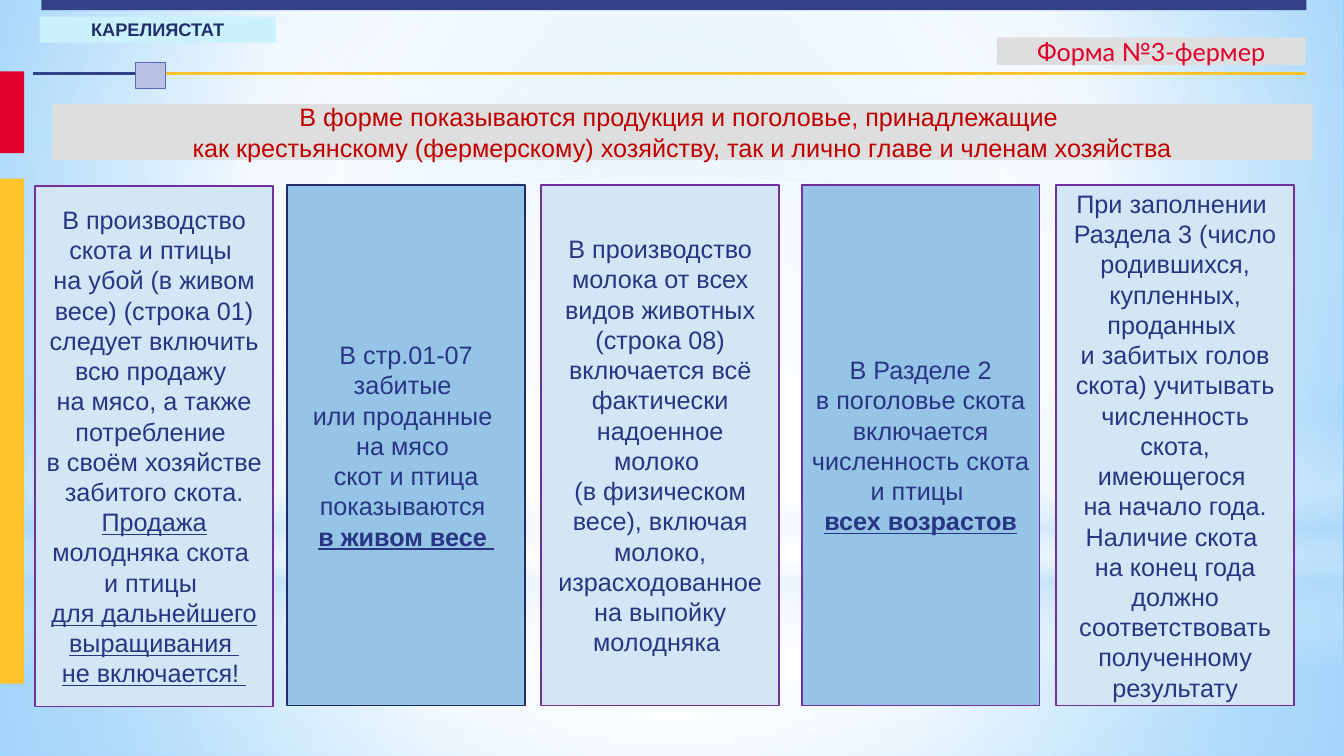
"""Builds the slide on filling in Form No. 3-farmer."""
import pptx
import pptx.dml.color
import pptx.enum.shapes
import pptx.enum.text
import pptx.oxml
import pptx.oxml.ns
import pptx.util

NAVY, GOLD, RED, GREY = "334286", "FFC32E", "E1002B", "DEDEDE"
INK, PURPLE, PALE, BLUE = "283583", "71309D", "D3E6F5", "95C4E7"
WHITE, HAZE = "FFFFFF", "B4DCFA"
CENTRE = (50, 50, 50, 50)
SHAPES = pptx.enum.shapes.MSO_SHAPE
ANCHORS = pptx.enum.text.MSO_ANCHOR
UNDERLINED = {"underline": True}
STRONG = {"underline": True, "bold": True}


def colour(value):
    return pptx.dml.color.RGBColor.from_string(value)


class SlideBuilder:
    def __init__(self, slide):
        self.slide = slide
        self.font = {"name": "Arial", "size": pptx.util.Pt(18)}

    def gradient(self, owner, stops, focus=None):
        owner.fill.gradient()
        element = self.slide.element if owner is self.slide.background else owner.element
        current = element.xpath(".//a:gradFill")[0]
        marks = "".join(
            f'<a:gs pos="{position * 1000}"><a:srgbClr val="{value}">'
            f'<a:alpha val="{opacity * 1000}"/></a:srgbClr></a:gs>'
            for position, value, opacity in stops
        )
        if focus:
            sides = " ".join(f'{side}="{part * 1000}"' for side, part in zip("ltrb", focus))
            direction = f'<a:path path="circle"><a:fillToRect {sides}/></a:path>'
        else:
            direction = '<a:lin ang="5400000" scaled="0"/>'
        namespace = pptx.oxml.ns.nsdecls("a")
        current.getparent().replace(current, pptx.oxml.parse_xml(
            f'<a:gradFill {namespace} rotWithShape="1"><a:gsLst>{marks}</a:gsLst>'
            f'{direction}</a:gradFill>'))

    def shape(self, box, fill=None, line=None, width=1.25, kind=SHAPES.RECTANGLE):
        shape = self.slide.shapes.add_shape(kind, *map(pptx.util.Pt, box))
        shape.shadow.inherit = False
        if fill:
            shape.fill.solid()
            shape.fill.fore_color.rgb = colour(fill)
        if line:
            shape.line.color.rgb = colour(line)
            shape.line.width = pptx.util.Pt(width)
        else:
            shape.line.fill.background()
        return shape

    def glow(self, box, stops, focus=None, kind=SHAPES.RECTANGLE):
        self.gradient(self.shape(box, kind=kind), stops, focus)

    def rule(self, start, end, top, value):
        line = self.slide.shapes.add_connector(
            pptx.enum.shapes.MSO_CONNECTOR.STRAIGHT,
            *map(pptx.util.Pt, (start, top, end, top)))
        line.line.color.rgb = colour(value)
        line.line.width = pptx.util.Pt(2)
        line.element.spPr.append(pptx.oxml.parse_xml(
            f'<a:effectLst {pptx.oxml.ns.nsdecls("a")}/>'))

    def text(self, shape, paragraphs, ink, anchor=ANCHORS.MIDDLE, margins=(7.2, 3.6),
             **changes):
        frame = shape.text_frame
        side, edge = map(pptx.util.Pt, margins)
        layout = {"word_wrap": True, "vertical_anchor": anchor, "margin_left": side,
                  "margin_right": side, "margin_top": edge, "margin_bottom": edge}
        for name, value in layout.items():
            setattr(frame, name, value)
        for index, runs in enumerate(paragraphs):
            paragraph = frame.add_paragraph() if index else frame.paragraphs[0]
            paragraph.alignment = pptx.enum.text.PP_ALIGN.CENTER
            for words, extra in [(runs, {})] if isinstance(runs, str) else runs:
                run = paragraph.add_run()
                run.text = words
                run.font.color.rgb = colour(ink)
                for name, value in {**self.font, **changes, **extra}.items():
                    setattr(run.font, name, value)


COLUMNS = [
    (25.1, 132.6, PALE, PURPLE, [
        "В производство скота и птицы ",
        "на убой (в живом весе) (строка 01) следует включить всю продажу ",
        "на мясо, а также потребление ",
        "в своём хозяйстве забитого скота.",
        [("Продажа", UNDERLINED), (" молодняка скота ", {})],
        "и птицы ",
        [("для дальнейшего выращивания ", UNDERLINED)],
        [("не включается! ", UNDERLINED)]]),
    (205.1, 132, BLUE, "1F2E69", [
        "В стр.01-07 забитые ",
        "или проданные ",
        "на мясо ",
        "скот и птица показываются ",
        [("в живом весе ", STRONG)]]),
    (386.6, 132, PALE, PURPLE, [
        "В производство молока от всех видов животных (строка 08) включается всё "
        "фактически надоенное молоко ",
        "(в физическом весе), включая молоко, израсходованное на выпойку молодняка "]),
    (572.6, 132, BLUE, PURPLE, [
        "В Разделе 2",
        "в поголовье скота включается численность скота и птицы ",
        [("всех возрастов", STRONG)]]),
    (754.4, 132, PALE, PURPLE, [
        "При заполнении ",
        "Раздела 3 (число родившихся, купленных, проданных ",
        "и забитых голов скота) учитывать численность скота, имеющегося ",
        "на начало года.",
        "Наличие скота ",
        "на конец года должно соответствовать полученному результату"]),
]


def main():
    presentation = pptx.Presentation()
    presentation.slide_width = pptx.util.Pt(960)
    presentation.slide_height = pptx.util.Pt(540)
    slide = presentation.slides.add_slide(presentation.slide_layouts[6])
    builder = SlideBuilder(slide)

    builder.gradient(slide.background, [(0, "9AD5FF", 100), (55, WHITE, 100),
                                        (100, "5BB9FF", 100)], (20, 10, 20, 60))
    builder.glow((0, 402, 960, 138), [(0, WHITE, 91), (37, WHITE, 76), (100, HAZE, 79)], CENTRE)
    builder.glow((0, 0, 960, 402), [(0, WHITE, 89), (48, WHITE, 62), (100, HAZE, 79)], CENTRE)
    builder.glow((0, 297, 960, 180), [(0, WHITE, 0), (29, WHITE, 30), (45, HAZE, 40),
                                      (55, WHITE, 26), (65, HAZE, 60), (100, WHITE, 0)])
    builder.glow((0, 126, 960, 402), [(0, WHITE, 100), (56, WHITE, 0)], CENTRE, SHAPES.OVAL)

    builder.shape((29.5, 0, 903.6, 7.2), NAVY)
    builder.shape((0, 51, 17.3, 58.4), RED)
    builder.shape((0, 127.6, 17.3, 360.7), GOLD)
    builder.rule(23.8, 113, 52.4, NAVY)
    builder.rule(113, 932.6, 52.4, GOLD)
    builder.shape((97, 44.5, 21, 18.5), "B8C2E9", "5968B0", 0.75)

    agency = builder.shape((28.4, 12, 168.5, 18.6), "CBF1FD")
    builder.text(agency, ["КАРЕЛИЯСТАТ"], "21306A", ANCHORS.TOP, (2.9, 1.4),
                 size=pptx.util.Pt(13), bold=True)
    form = builder.shape((712, 26.7, 220.5, 19.6), GREY)
    builder.text(form, ["Форма №3-фермер"], "E0002B", name="Lato")
    heading = builder.shape((37.4, 74.2, 900, 40), GREY)
    builder.text(heading, [
        "В форме показываются продукция и поголовье, принадлежащие ",
        "как крестьянскому (фермерскому) хозяйству, так и лично главе и членам хозяйства",
    ], "C00000")

    for left, top, fill, border, paragraphs in COLUMNS:
        column = builder.shape((left, top, 170, 372), fill, border)
        builder.text(column, paragraphs, INK)
    presentation.save("out.pptx")


if __name__ == "__main__":
    main()
